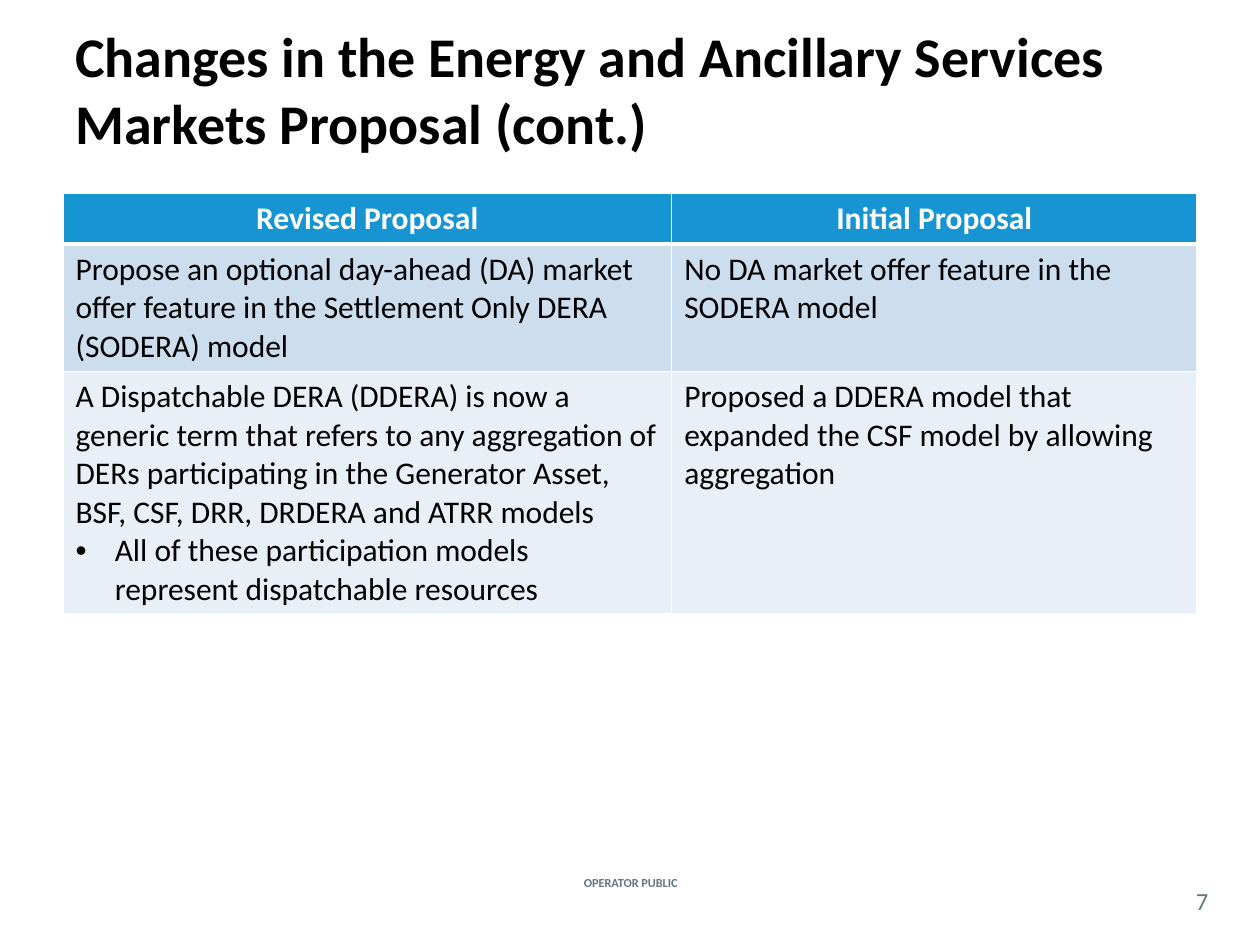
from lxml.etree import SubElement
from pptx import Presentation
from pptx.dml.color import RGBColor
from pptx.enum.text import MSO_ANCHOR as Anchor, PP_ALIGN as Align
from pptx.oxml.ns import qn
from pptx.util import Cm, Pt

BLACK = RGBColor(0x00, 0x00, 0x00)
WHITE = RGBColor(0xFF, 0xFF, 0xFF)
SLATE = RGBColor(0x62, 0x77, 0x7F)
HEADER_BLUE = RGBColor(0x17, 0x95, 0xD2)
BAND_BLUE = RGBColor(0xCC, 0xDD, 0xEE)
BAND_PALE = RGBColor(0xE8, 0xEF, 0xF7)


def write(frame, text, size=18, color=BLACK, bold=False, align=Align.LEFT):
    """Fill a text frame, one paragraph per line; a leading • makes a bullet."""
    frame.word_wrap = True
    for i, line in enumerate(text.split("\n")):
        para = frame.paragraphs[0] if i == 0 else frame.add_paragraph()
        para.alignment = align
        if line.startswith("•"):
            props = para._p.get_or_add_pPr()
            props.set("marL", str(Cm(0.79)))
            props.set("indent", str(-Cm(0.79)))
            SubElement(props, qn("a:buFont"), typeface="Arial")
            SubElement(props, qn("a:buChar"), char="•")
        run = para.add_run()
        run.text = line.lstrip("•")
        run.font.name = "Calibri"
        run.font.size = Pt(size)
        run.font.bold = bold
        run.font.color.rgb = color


def set_borders(cell, bottom=1, top=1):
    """Draw white rules around a cell, widths in points."""
    props = cell._tc.get_or_add_tcPr()
    sides = (("L", 1), ("R", 1), ("T", top), ("B", bottom))
    for i, (side, width) in enumerate(sides):
        rule = SubElement(props, qn(f"a:ln{side}"), w=str(Pt(width)))
        paint = SubElement(rule, qn("a:solidFill"))
        SubElement(paint, qn("a:srgbClr"), val=str(WHITE))
        props.insert(i, rule)  # rules come before the cell fill


prs = Presentation()
prs.slide_width, prs.slide_height = Cm(25.4), Cm(19.05)
slide = prs.slides.add_slide(prs.slide_layouts[6])

# Title, classification label and page number
labels = [
    ("Changes in the Energy and Ancillary Services Markets Proposal (cont.)",
     (1.27, 0.2, 22.86, 3.18), 0.25, dict(size=32, bold=True)),
    ("OPERATOR PUBLIC", (10.85, 17.15, 3.73, 1.27), 0.25,
     dict(size=7, color=SLATE, bold=True, align=Align.CENTER)),
    ("7", (23.7, 17.78, 1.07, 0.74), 0,
     dict(size=14, color=SLATE, align=Align.CENTER)),
]
for text, place, inset, style in labels:
    frame = slide.shapes.add_textbox(*map(Cm, place)).text_frame
    frame.vertical_anchor = Anchor.MIDDLE
    frame.margin_left = frame.margin_right = Cm(inset)
    frame.margin_top = frame.margin_bottom = Cm(inset / 2)
    write(frame, text, **style)

# Comparison of the two proposals: row height, fill, texts
rows = [
    (1.03, HEADER_BLUE, ("Revised Proposal", "Initial Proposal")),
    (2.57, BAND_BLUE, (
        "Propose an optional day-ahead (DA) market offer feature in the "
        "Settlement Only DERA (SODERA) model",
        "No DA market offer feature in the SODERA model")),
    (4.89, BAND_PALE, (
        "A Dispatchable DERA (DDERA) is now a generic term that refers to any "
        "aggregation of DERs participating in the Generator Asset, BSF, CSF, "
        "DRR, DRDERA and ATRR models\n"
        "•All of these participation models represent dispatchable resources",
        "Proposed a DDERA model that expanded the CSF model by allowing "
        "aggregation")),
]
comparison = slide.shapes.add_table(
    len(rows), 2, Cm(1.27), Cm(3.89), Cm(22.86), Cm(8.49)).table
for column, width in zip(comparison.columns, (12.27, 10.59)):
    column.width = Cm(width)
for r, (height, fill, texts) in enumerate(rows):
    comparison.rows[r].height = Cm(height)
    header = r == 0
    for c, text in enumerate(texts):
        cell = comparison.cell(r, c)
        cell.fill.solid()
        cell.fill.fore_color.rgb = fill
        set_borders(cell, bottom=3 if header else 1, top=3 if r == 1 else 1)
        write(cell.text_frame, text, bold=header,
              color=WHITE if header else BLACK,
              align=Align.CENTER if header else Align.LEFT)

prs.save("out.pptx")
